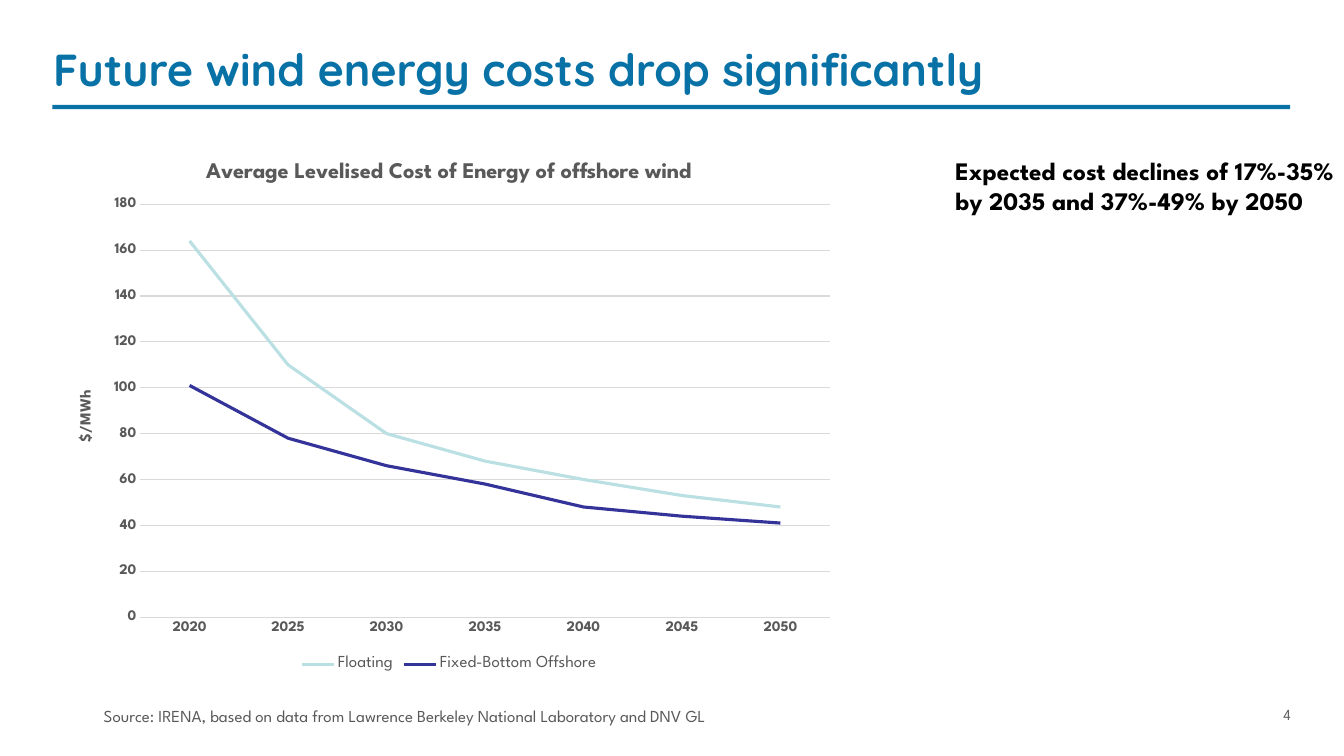
from dataclasses import dataclass

import lxml.etree
import pptx
import pptx.chart.axis
import pptx.chart.data
import pptx.dml.color
import pptx.enum.chart
import pptx.enum.shapes
import pptx.enum.text
import pptx.oxml
import pptx.oxml.ns
import pptx.slide
import pptx.text.text
import pptx.util

Pt = pptx.util.Pt
RGBColor = pptx.dml.color.RGBColor
Align = pptx.enum.text.PP_ALIGN
Anchor = pptx.enum.text.MSO_ANCHOR

BLUE = RGBColor(0x08, 0x72, 0xA6)
BLACK = RGBColor(0x00, 0x00, 0x00)
DARK_GREY = RGBColor(0x59, 0x59, 0x59)
NUMBER_GREY = RGBColor(0x64, 0x64, 0x64)
GRID_GREY = RGBColor(0xD9, 0xD9, 0xD9)
PALE_TEAL = RGBColor(0xBB, 0xE0, 0xE3)
INDIGO = RGBColor(0x33, 0x33, 0x99)

TITLE_FONT = "Quicksand"
BODY_FONT = "League Spartan"


@dataclass(frozen=True)
class Style:
    size: float
    color: RGBColor
    bold: bool = False
    name: str = BODY_FONT


@dataclass(frozen=True)
class Label:
    text: str
    left: float
    top: float
    width: float
    height: float
    style: Style
    align: Align = Align.LEFT
    anchor: Anchor = Anchor.TOP
    inset: tuple[float, float] = (7.2, 3.6)


@dataclass(frozen=True)
class CostSeries:
    name: str
    values: tuple[int, ...]
    color: RGBColor


TITLE = Label("Future wind energy costs drop significantly", 38, 30, 884, 38,
              Style(32, BLUE, True, TITLE_FONT), anchor=Anchor.MIDDLE, inset=(0, 0))
LABELS = (
    Label("Expected cost declines of 17%-35% by 2035 and 37%-49% by 2050",
          675.4, 107.3, 284.4, 85.7, Style(18, BLACK, True)),
    Label("Source: IRENA, based on data from Lawrence Berkeley National Laboratory and DNV GL",
          67, 486, 566, 36, Style(12, DARK_GREY), anchor=Anchor.BOTTOM),
    Label("4", 846.5, 504, 75.6, 24.5, Style(11, NUMBER_GREY),
          align=Align.RIGHT, inset=(0, 0)),
)
YEARS = [str(year) for year in range(2020, 2051, 5)]
COSTS = (
    CostSeries("Floating", (164, 110, 80, 68, 60, 53, 48), PALE_TEAL),
    CostSeries("Fixed-Bottom Offshore", (101, 78, 66, 58, 48, 44, 41), INDIGO),
)
PLOT_AREA = {"x": 0.11, "y": 0.12, "w": 0.87, "h": 0.77}


def apply_style(font: pptx.text.text.Font, style: Style) -> None:
    font.name = style.name
    font.size = Pt(style.size)
    font.bold = style.bold
    font.color.rgb = style.color


def write_text(frame: pptx.text.text.TextFrame, text: str, style: Style,
               align: Align = Align.CENTER) -> None:
    para = frame.paragraphs[0]
    para.alignment = align
    span = para.add_run()
    span.text = text
    apply_style(span.font, style)


def fill_label(box, label: Label) -> None:
    box.left, box.top = Pt(label.left), Pt(label.top)
    box.width, box.height = Pt(label.width), Pt(label.height)
    frame = box.text_frame
    frame.word_wrap = True
    frame.auto_size = pptx.enum.text.MSO_AUTO_SIZE.NONE
    frame.vertical_anchor = label.anchor
    frame.margin_left = frame.margin_right = Pt(label.inset[0])
    frame.margin_top = frame.margin_bottom = Pt(label.inset[1])
    write_text(frame, label.text, label.style, label.align)


def add_title_rule(page: pptx.slide.Slide) -> None:
    rule = page.shapes.add_shape(pptx.enum.shapes.MSO_SHAPE.RECTANGLE,
                                 Pt(37.5), Pt(75), Pt(884), Pt(3))
    rule.shadow.inherit = False
    rule.fill.solid()
    rule.fill.fore_color.rgb = BLUE
    rule.line.fill.background()


def format_axis(axis: pptx.chart.axis._BaseAxis) -> None:
    axis.major_tick_mark = pptx.enum.chart.XL_TICK_MARK.NONE
    axis.minor_tick_mark = pptx.enum.chart.XL_TICK_MARK.NONE
    apply_style(axis.tick_labels.font, Style(10.5, DARK_GREY, True))


def place_plot_area(chart) -> None:
    plot_area = chart.plots[0]._element.getparent()
    for old in plot_area.findall(pptx.oxml.ns.qn("c:layout")):
        plot_area.remove(old)
    layout = lxml.etree.Element(pptx.oxml.ns.qn("c:layout"))
    manual = lxml.etree.SubElement(layout, pptx.oxml.ns.qn("c:manualLayout"))
    settings = {"layoutTarget": "inner", "xMode": "edge", "yMode": "edge", **PLOT_AREA}
    for tag, value in settings.items():
        lxml.etree.SubElement(manual, pptx.oxml.ns.qn(f"c:{tag}")).set("val", str(value))
    plot_area.insert(0, layout)


def add_cost_chart(page: pptx.slide.Slide) -> None:
    data = pptx.chart.data.CategoryChartData()
    data.categories = YEARS
    for cost in COSTS:
        data.add_series(cost.name, cost.values)
    chart = page.shapes.add_chart(pptx.enum.chart.XL_CHART_TYPE.LINE,
                                  Pt(38), Pt(100), Pt(566), Pt(383), data).chart
    apply_style(chart.font, Style(10, BLACK))

    chart.has_title = True
    write_text(chart.chart_title.text_frame,
               "Average Levelised Cost of Energy of offshore wind",
               Style(16, DARK_GREY, True))
    chart.chart_title.include_in_layout = False

    chart.has_legend = True
    chart.legend.position = pptx.enum.chart.XL_LEGEND_POSITION.BOTTOM
    chart.legend.include_in_layout = False
    apply_style(chart.legend.font, Style(12, DARK_GREY))

    years, prices = chart.category_axis, chart.value_axis
    for axis in (years, prices):
        format_axis(axis)
    prices.minimum_scale, prices.maximum_scale, prices.major_unit = 0, 180, 20
    prices.has_major_gridlines = True
    for line in (years.format.line, prices.major_gridlines.format.line):
        line.color.rgb = GRID_GREY
        line.width = Pt(0.75)
    prices.format.line.fill.background()
    prices.has_title = True
    write_text(prices.axis_title.text_frame, "$/MWh", Style(11, DARK_GREY, True))

    plot = chart.plots[0]
    plot.vary_by_categories = False
    for series, cost in zip(plot.series, COSTS):
        series.smooth = False
        series.marker.style = pptx.enum.chart.XL_MARKER_STYLE.NONE
        series.format.line.color.rgb = cost.color
        series.format.line.width = Pt(2.25)
    place_plot_area(chart)


def main() -> None:
    deck = pptx.Presentation()
    deck.slide_width, deck.slide_height = Pt(960), Pt(540)
    page = deck.slides.add_slide(deck.slide_layouts[5])
    add_title_rule(page)
    fill_label(page.shapes.title, TITLE)
    for label in LABELS:
        box = page.shapes.add_textbox(Pt(label.left), Pt(label.top),
                                      Pt(label.width), Pt(label.height))
        fill_label(box, label)
    add_cost_chart(page)
    deck.save("out.pptx")


if __name__ == "__main__":
    main()
